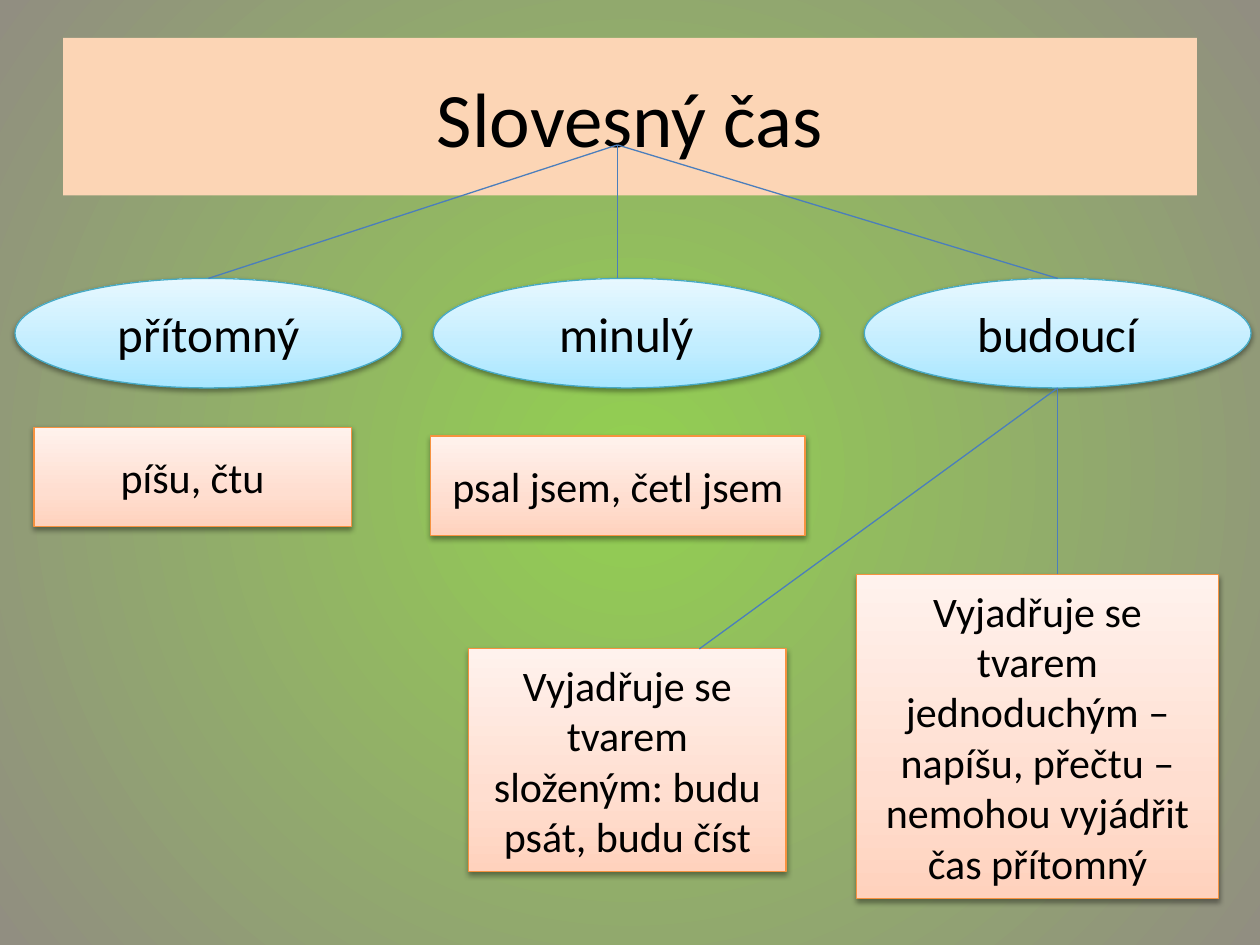
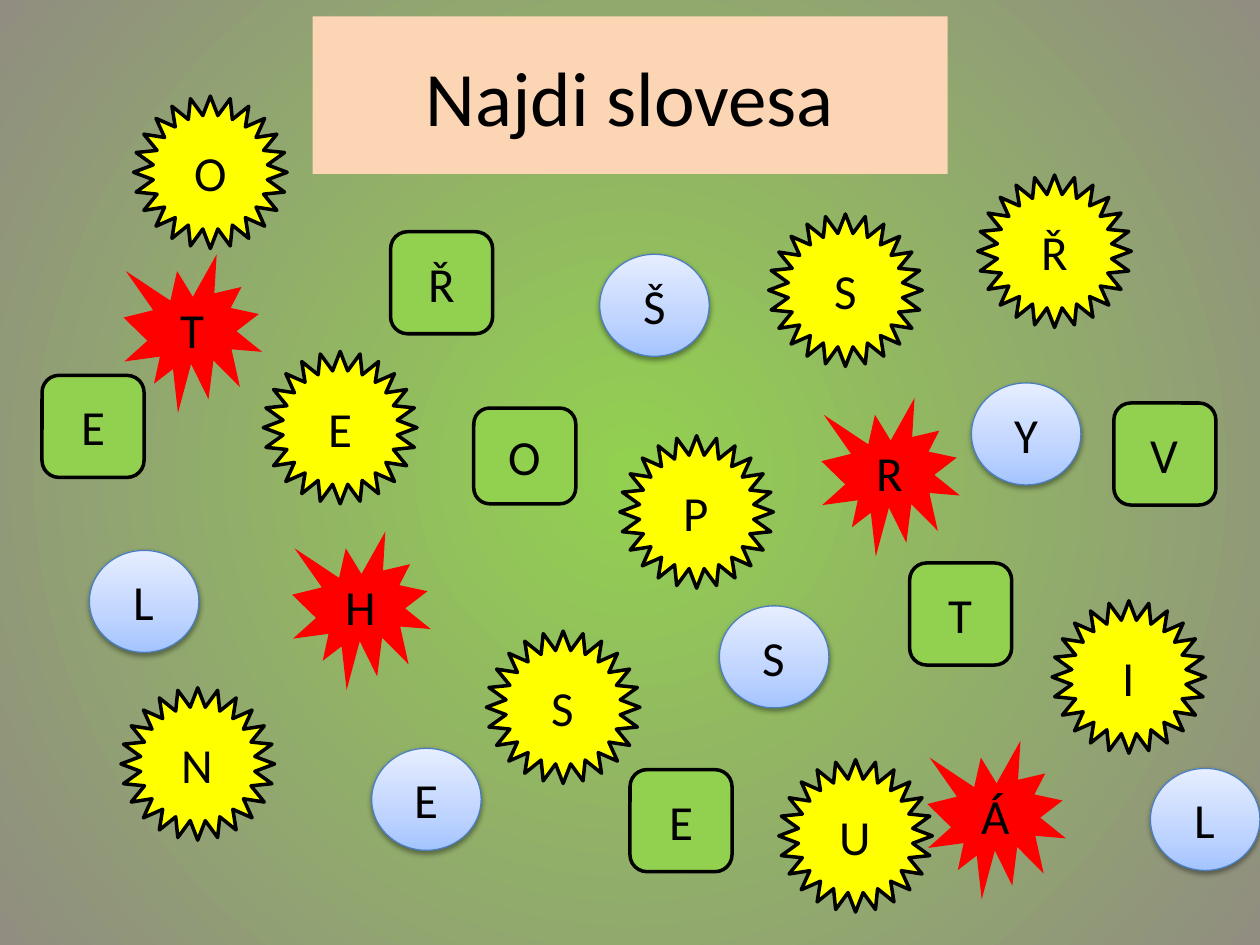
from dataclasses import dataclass, replace

from pptx import Presentation
from pptx.dml.color import RGBColor as RGB
from pptx.enum.shapes import MSO_CONNECTOR as LINK, MSO_SHAPE as FORM
from pptx.enum.text import MSO_ANCHOR as ANCHOR, PP_ALIGN as ALIGN
from pptx.oxml import parse_xml
from pptx.oxml.ns import nsdecls, qn
from pptx.util import Pt

UP = '<a:lin ang="16200000" scaled="1"/>'
ROUND = ('<a:path path="circle"><a:fillToRect l="50000" t="50000" '
         'r="50000" b="50000"/></a:path>')


@dataclass(frozen=True)
class Theme:
    """Colours, font and type sizes shared by the slides."""
    font: str = "Calibri"
    ink: str = "000000"
    band: str = "FCD5B5"
    link: str = "4B7EBC"
    rim: str = "46AAC5"
    warm: str = "F69240"
    red: str = "FF0000"
    sun: str = "FFFF00"
    leaf: str = "92D050"
    back: tuple = ((0, "92D050"), (100, "918E81"))
    aqua: tuple = ((0, "A7E6FF"), (35, "C1EDFF"), (100, "E7F8FF"))
    peach: tuple = ((0, "FFD2BD"), (35, "FFDED0"), (100, "FFF2ED"))
    blue: tuple = ((0, "A4C4FF"), (35, "BFD4FF"), (100, "E6EEFF"))
    head: int = 44
    label: int = 28
    note: int = 24
    thin: float = 0.75
    thick: float = 2


T = Theme()


@dataclass(frozen=True)
class Box:
    """A region in points."""
    left: float
    top: float
    wide: float
    high: float

    def inner(self, x, y, wide, high):
        """Return a box offset from this one's corner."""
        return Box(self.left + x, self.top + y, wide, high)

    def rect(self):
        """Return the four lengths for a shape."""
        return Pt(self.left), Pt(self.top), Pt(self.wide), Pt(self.high)


@dataclass(frozen=True)
class Kind:
    """Form, size and finish of a labelled shape."""
    form: FORM
    wide: float
    high: float
    fill: object
    edge: str = ""
    width: float = 0
    size: int = T.label


TENSE = Kind(FORM.OVAL, 221, 62.6, T.aqua, T.rim, T.thin)
NOTE = Kind(FORM.RECTANGLE, 181.4, 56.9, T.peach, T.warm, T.thin, T.note)
BURST = Kind(FORM.EXPLOSION1, 79.2, 90.7, T.red)
BALL = Kind(FORM.OVAL, 62.6, 58.3, T.blue, T.link, T.thin)
STAR = Kind(FORM.STAR_24_POINT, 87.8, 87.1, T.sun, T.ink, T.thick)
TILE = Kind(FORM.ROUNDED_RECTANGLE, 58.3, 58.3, T.leaf, T.ink, T.thick)

LETTERS = (
    (BURST, (("T", 46.6, 90.4), ("Á", 505.9, 368.4), ("R", 445.4, 172.5),
             ("H", 143, 248.8))),
    (BALL, (("Y", 531.1, 163.9), ("E", 188.4, 372.7), ("Š", 318.7, 90.4),
            ("L", 633.4, 384.2), ("S", 387.1, 291.3), ("L", 27.1, 259.6))),
    (STAR, (("S", 415.2, 67.4), ("I", 577.2, 288.4), ("P", 330.2, 194.1),
            ("N", 45.1, 338.1), ("E", 126.5, 145.9), ("Ř", 534.7, 45.1),
            ("S", 253.9, 305.7), ("O", 52.3, 0), ("U", 421, 379.2))),
    (TILE, (("Ř", 199.2, 77.5), ("E", 0, 159.6), ("V", 612.5, 175.4),
            ("E", 336, 384.9), ("T", 495.8, 266.8))),
    (replace(TILE, high=54.7), (("O", 246.7, 178.3),)),
)


def blend(fill, root, stops, course):
    """Give a fill several gradient stops and a course."""
    fill.gradient()
    grad = next(root.iter(qn("a:gradFill")))
    marks = "".join(f'<a:gs pos="{pos * 1000}"><a:srgbClr val="{tint}"/></a:gs>'
                    for pos, tint in stops)
    fresh = parse_xml(f'<a:gradFill {nsdecls("a")} rotWithShape="1">'
                      f'<a:gsLst>{marks}</a:gsLst>{course}</a:gradFill>')
    grad.getparent().replace(grad, fresh)


def shade(shape):
    """Put a soft shadow below a shape."""
    effects = shape._element.spPr.find(qn("a:effectLst"))
    effects.append(parse_xml(
        f'<a:outerShdw {nsdecls("a")} blurRad="40000" dist="20000" '
        'dir="5400000" rotWithShape="0"><a:srgbClr val="000000">'
        '<a:alpha val="38000"/></a:srgbClr></a:outerShdw>'))


def write(shape, text, size):
    """Set centred text in the theme font."""
    frame = shape.text_frame
    frame.text = text
    frame.word_wrap = True
    frame.vertical_anchor = ANCHOR.MIDDLE
    para = frame.paragraphs[0]
    para.alignment = ALIGN.CENTER
    para.font.name = T.font
    para.font.size = Pt(size)
    para.font.color.rgb = RGB.from_string(T.ink)


def label(slide, kind, box, text):
    """Draw one labelled shape of a kind."""
    shape = slide.shapes.add_shape(kind.form, *box.rect())
    shape.shadow.inherit = False
    if isinstance(kind.fill, str):
        shape.fill.solid()
        shape.fill.fore_color.rgb = RGB.from_string(kind.fill)
    else:
        blend(shape.fill, shape._element.spPr, kind.fill, UP)
        shade(shape)
    if kind.edge:
        shape.line.color.rgb = RGB.from_string(kind.edge)
        shape.line.width = Pt(kind.width)
    else:
        shape.line.fill.background()
    write(shape, text, kind.size)


def join(slide, box, tail, tip):
    """Draw a thin line between two points of a box."""
    ends = [Pt(edge + step) for point in (tail, tip)
            for edge, step in zip((box.left, box.top), point)]
    line = slide.shapes.add_connector(LINK.STRAIGHT, *ends)
    line.line.color.rgb = RGB.from_string(T.link)
    line.line.width = Pt(T.thin)
    line._element.spPr.append(parse_xml(f'<a:effectLst {nsdecls("a")}/>'))


def start(deck, box, text):
    """Add a slide with its title band."""
    slide = deck.slides.add_slide(deck.slide_layouts[5])
    title = slide.shapes.title
    title.left, title.top, title.width, title.height = box.rect()
    title.fill.solid()
    title.fill.fore_color.rgb = RGB.from_string(T.band)
    write(title, text, T.head)
    return slide


def tree(slide, box):
    """Draw the tenses, their notes and the branches."""
    row, far = 76.3, 485.3
    for text, x in (("přítomný", 0), ("minulý", 239), ("budoucí", far)):
        label(slide, TENSE, box.inner(x, row, TENSE.wide, TENSE.high), text)
    for text, *spot in (
            ("píšu, čtu", 10.8, 161.3, NOTE.wide, NOTE.high),
            ("Vyjadřuje se tvarem složeným: budu psát, budu číst",
             259.2, 288, NOTE.wide, 127.4),
            ("psal jsem, četl jsem", 237.6, 166.3, 213.8, NOTE.high),
            ("Vyjadřuje se tvarem jednoduchým – napíšu, přečtu – "
             "nemohou vyjádřit čas přítomný", 481, 245.5, 206.6, 185)):
        label(slide, NOTE, box.inner(*spot), text)
    hub, mid = (344.2, 0), TENSE.wide / 2
    last = far + mid
    for x in (mid, hub[0], last):
        join(slide, box, hub, (x, row))
    for end in ((391, 288), (last, 245.5)):
        join(slide, box, (last, row + TENSE.high), end)


def scatter(slide, box):
    """Spread the letters over the board."""
    for kind, marks in LETTERS:
        for text, x, y in marks:
            label(slide, kind, box.inner(x, y, kind.wide, kind.high), text)


def main():
    """Build and save the deck."""
    deck = Presentation()
    deck.slide_width, deck.slide_height = Pt(720), Pt(540)
    master = deck.slide_master
    blend(master.background.fill, master._element, T.back, ROUND)
    tree(start(deck, Box(36, 21.6, 648, 90), "Slovesný čas"),
         Box(8.6, 82.8, 706.4, 430.5))
    scatter(start(deck, Box(178.6, 9.4, 362.9, 90), "Najdi slovesa"),
            Box(24, 54.9, 696, 466.3))
    deck.save("out.pptx")


if __name__ == "__main__":
    main()
